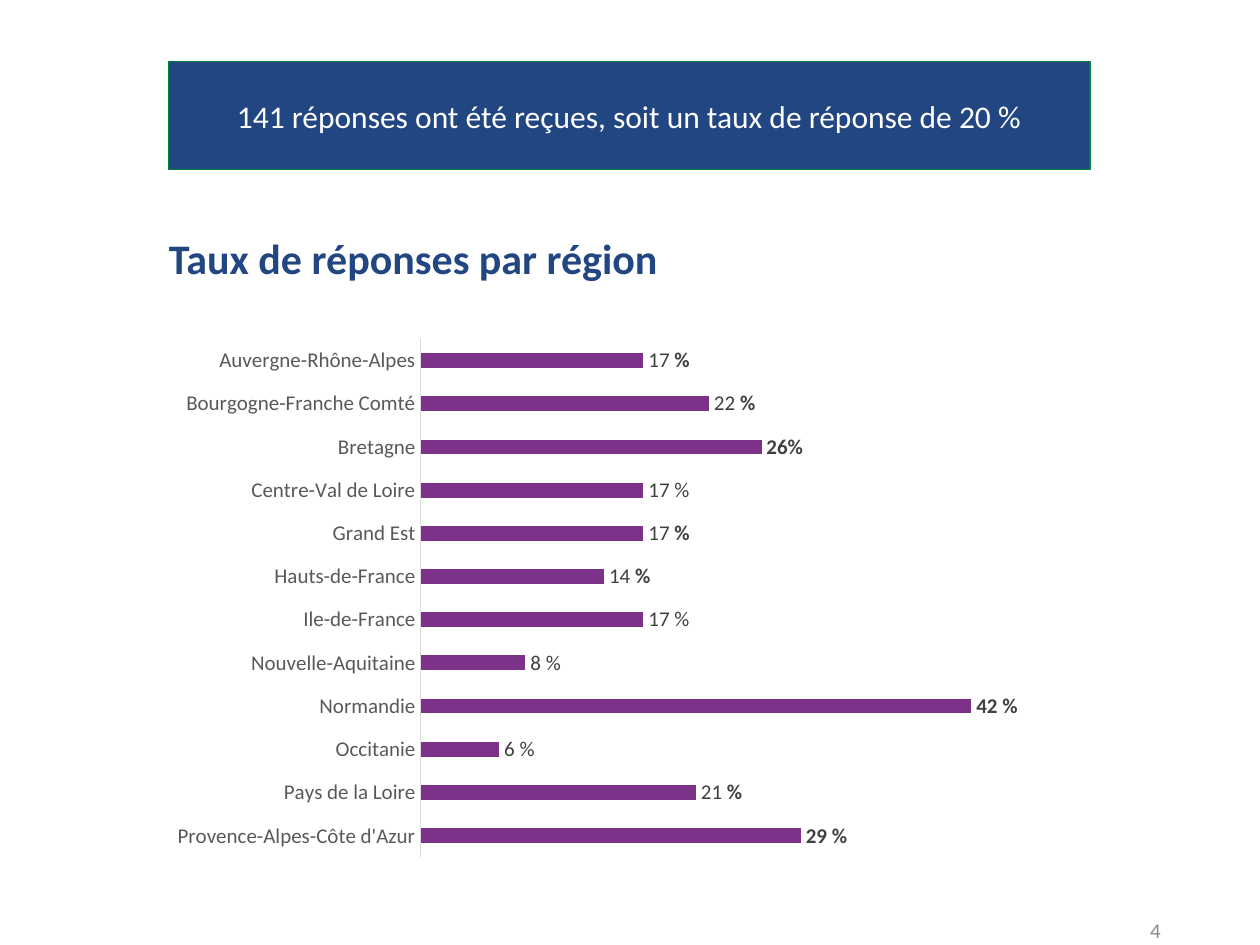
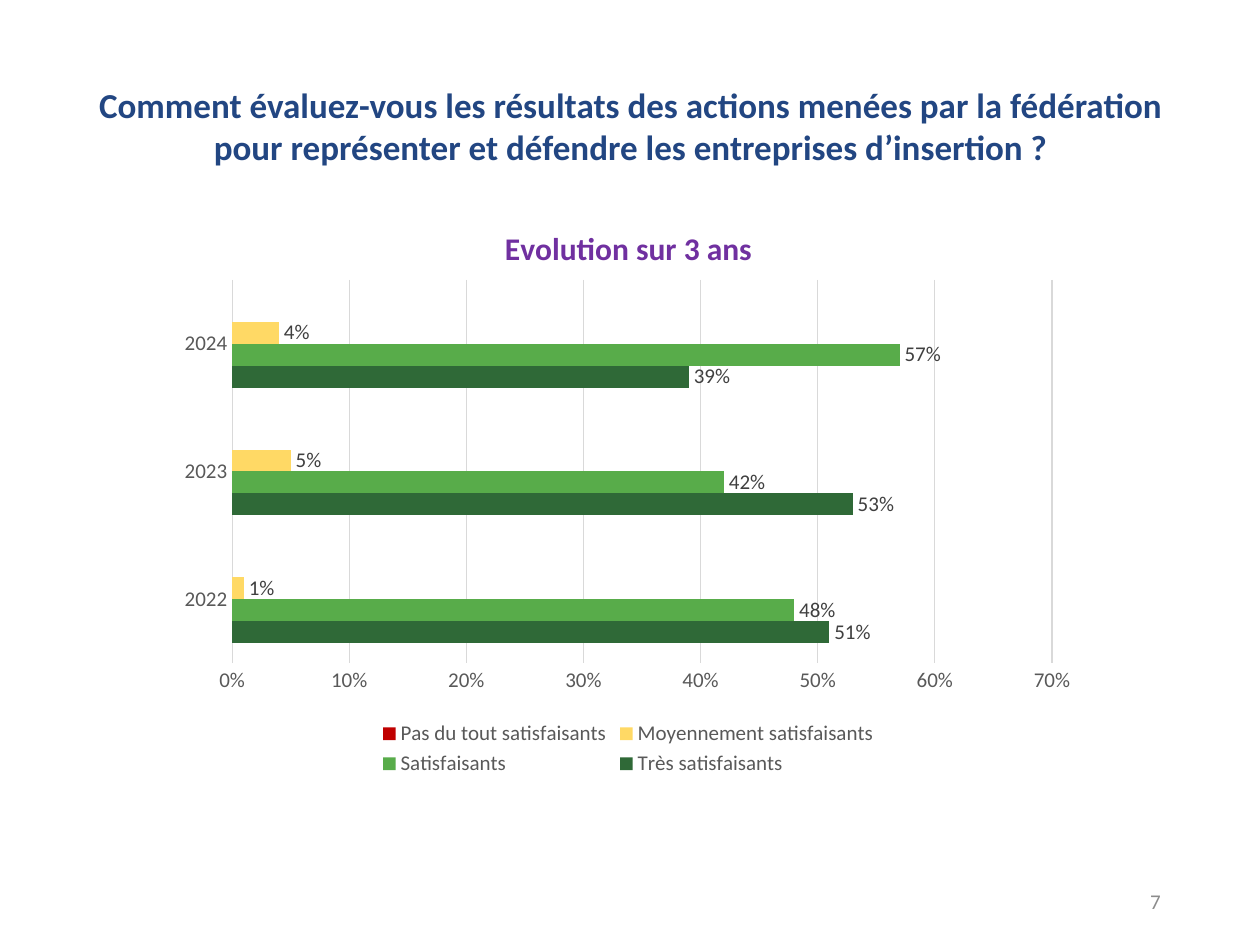
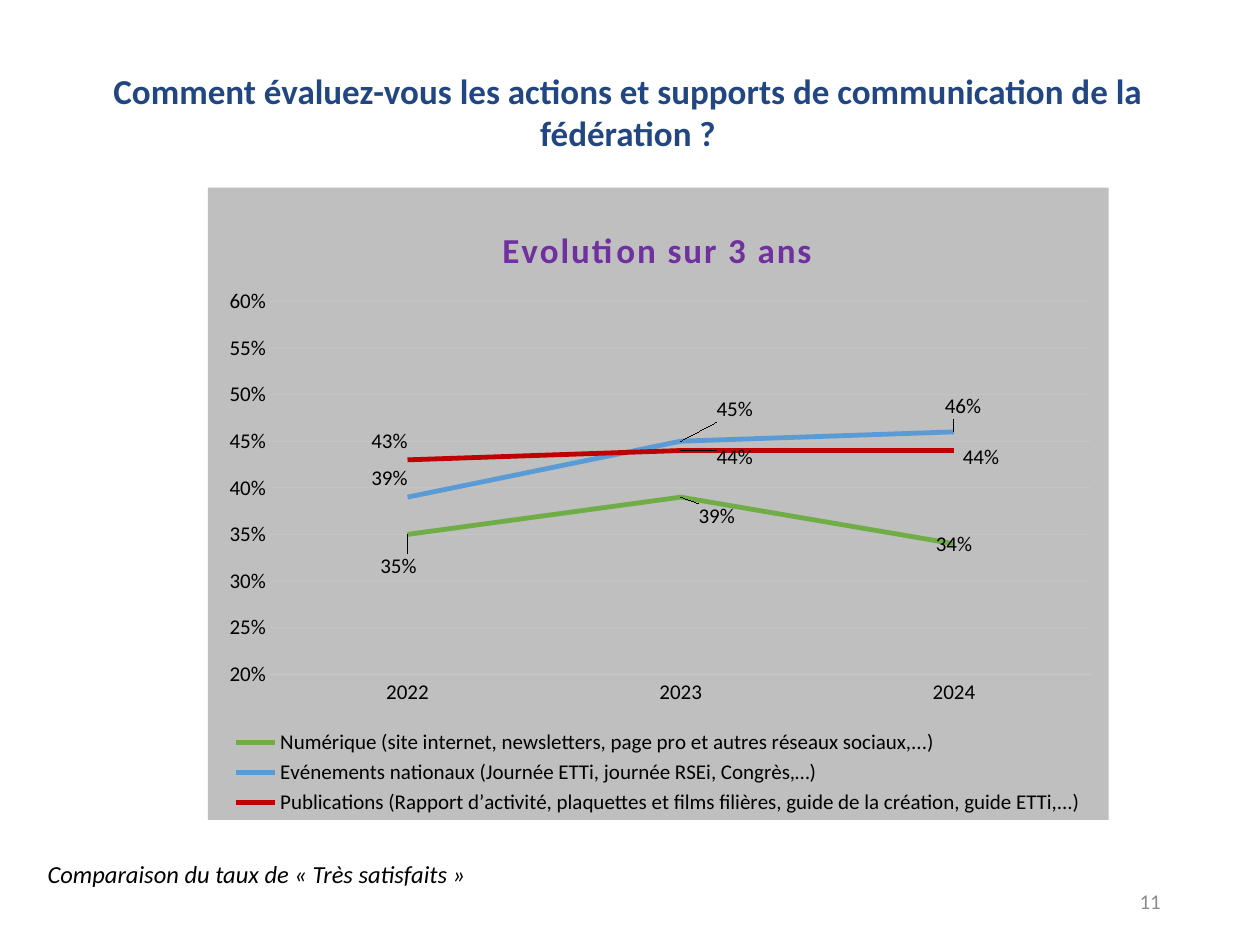
"""Build three survey slides: response rate by region and two three-year trends."""
from lxml.etree import SubElement
from pptx import Presentation
from pptx.chart.data import CategoryChartData
from pptx.dml.color import RGBColor
from pptx.enum.chart import XL_CHART_TYPE, XL_LABEL_POSITION, XL_LEGEND_POSITION, XL_TICK_MARK
from pptx.enum.shapes import MSO_SHAPE
from pptx.enum.text import MSO_ANCHOR, MSO_AUTO_SIZE, PP_ALIGN
from pptx.oxml.ns import qn
from pptx.util import Cm, Pt

FONT = "Calibri"
COLORS = {
    "navy": "224682",
    "green": "00823B",
    "plum": "7D3289",
    "violet": "7030A0",
    "white": "FFFFFF",
    "black": "000000",
    "number": "8C8C8C",
    "axis": "595959",
    "label": "404040",
    "rule": "D9D9D9",
    "pale_rule": "F2F2F2",
    "panel": "BFBFBF",
    "dark_green": "2F6937",
    "mid_green": "58AC4A",
    "yellow": "FFD965",
    "red": "C00000",
    "lime": "70AD47",
    "sky": "5B9BD5",
}


def style_font(font, size, color, bold=False, italic=False):
    font.name = FONT
    font.size = Pt(size)
    font.bold = bold
    font.italic = italic
    font.color.rgb = RGBColor.from_string(COLORS[color])


def set_layout(parent, position, modes, **fractions):
    layout = parent.find(qn("c:layout"))
    if layout is None:
        layout = parent.makeelement(qn("c:layout"))
        parent.insert(position, layout)
    manual = SubElement(layout, qn("c:manualLayout"))
    for name, value in {**modes, **fractions}.items():
        SubElement(manual, qn(f"c:{name}")).set("val", str(value))


EDGES = {"xMode": "edge", "yMode": "edge"}
INNER = {"layoutTarget": "inner", **EDGES}
YEARS = ["2022", "2023", "2024"]
REGIONS = [
    ("Provence-Alpes-Côte d'Azur", 0.29, "", "29 %"),
    ("Pays de la Loire", 0.21, "21 ", "%"),
    ("Occitanie", 0.06, "6 %", ""),
    ("Normandie", 0.42, "", "42 %"),
    ("Nouvelle-Aquitaine", 0.08, "8 %", ""),
    ("Ile-de-France", 0.17, "17 %", ""),
    ("Hauts-de-France", 0.14, "14 ", "%"),
    ("Grand Est", 0.17, "17 ", "%"),
    ("Centre-Val de Loire", 0.17, "17 %", ""),
    ("Bretagne", 0.26, "", "26%"),
    ("Bourgogne-Franche Comté", 0.22, "22 ", "%"),
    ("Auvergne-Rhône-Alpes", 0.17, "17 ", "%"),
]
PAGES = [
    {
        "title": "Taux de réponses par région",
        "title_box": (3.15, 4.55, 10.6, 1.27),
        "title_size": 24,
        "alignment": PP_ALIGN.LEFT,
        "number": "4",
        "number_top": 18.24,
        "type": XL_CHART_TYPE.BAR_CLUSTERED,
        "chart_box": (3.25, 4.85, 18.03, 13.23),
        "plot": (0.29, 0.15, 0.66, 0.79),
        "categories": [region[0] for region in REGIONS],
        "series": [("Taux de réponses", [region[1] for region in REGIONS], "plum")],
        "gap": 192,
        "scale": (0, 0.45),
        "axis_color": "axis",
        "label_color": "label",
        "rule": "rule",
    },
    {
        "title": "Comment évaluez-vous les résultats des actions menées par la fédération "
                 "pour représenter et défendre les entreprises d’insertion ?",
        "title_box": (1.73, 1.55, 21.97, 1.96),
        "title_size": 20,
        "alignment": PP_ALIGN.CENTER,
        "number": "7",
        "number_top": 17.65,
        "type": XL_CHART_TYPE.BAR_CLUSTERED,
        "chart_box": (3.38, 3.86, 18.57, 11.89),
        "plot": (0.07, 0.15, 0.89, 0.65),
        "categories": YEARS,
        "series": [
            ("Très satisfaisants", [0.51, 0.53, 0.39], "dark_green"),
            ("Satisfaisants", [0.48, 0.42, 0.57], "mid_green"),
            ("Moyennement satisfaisants", [0.01, 0.05, 0.04], "yellow"),
            ("Pas du tout satisfaisants", [None, None, None], "red"),
        ],
        "gap": 182,
        "scale": (0, 0.7),
        "step": 0.1,
        "axis_color": "axis",
        "label_color": "label",
        "rule": "rule",
        "heading": (18, 0, 0.36, 0.05),
    },
    {
        "title": "Comment évaluez-vous les actions et supports de communication "
                 "de la fédération ?",
        "title_box": (1.47, 1.27, 22.38, 1.96),
        "title_size": 20,
        "alignment": PP_ALIGN.CENTER,
        "number": "11",
        "number_top": 17.65,
        "type": XL_CHART_TYPE.LINE,
        "chart_box": (4.19, 3.78, 18.16, 12.75),
        "plot": (0.07, 0.18, 0.91, 0.59),
        "categories": YEARS,
        "series": [
            ("Numérique (site internet, newsletters, page pro et autres réseaux sociaux,...)",
             [0.35, 0.39, 0.34], "lime"),
            ("Evénements nationaux (Journée ETTi, journée RSEi, Congrès,…)",
             [0.39, 0.45, 0.46], "sky"),
            ("Publications (Rapport d’activité, plaquettes et films filières, "
             "guide de la création, guide ETTi,...)", [0.43, 0.44, 0.44], "red"),
        ],
        "scale": (0.2, 0.6),
        "step": 0.05,
        "axis_color": "black",
        "label_color": "black",
        "rule": "pale_rule",
        "heading": (20, 100, 0.32, 0.05),
    },
]

presentation = Presentation()
presentation.slide_width = Cm(25.4)
presentation.slide_height = Cm(19.05)
slides = []
charts = []

for page in PAGES:
    slide = presentation.slides.add_slide(presentation.slide_layouts[5])
    slides.append(slide)
    is_line = page["type"] == XL_CHART_TYPE.LINE

    title = slide.shapes.title
    title.left, title.top, title.width, title.height = map(Cm, page["title_box"])
    frame = title.text_frame
    frame.text = page["title"]
    frame.word_wrap = True
    frame.auto_size = MSO_AUTO_SIZE.NONE
    frame.vertical_anchor = MSO_ANCHOR.TOP
    frame.paragraphs[0].alignment = page["alignment"]
    style_font(frame.paragraphs[0].runs[0].font, page["title_size"], "navy", bold=True)

    number = slide.shapes.add_textbox(Cm(17.93), Cm(page["number_top"]), Cm(5.72), Cm(1.02))
    frame = number.text_frame
    frame.text = page["number"]
    frame.word_wrap = True
    frame.vertical_anchor = MSO_ANCHOR.MIDDLE
    frame.paragraphs[0].alignment = PP_ALIGN.RIGHT
    style_font(frame.paragraphs[0].runs[0].font, 12, "number")

    data = CategoryChartData(number_format="0%")
    data.categories = page["categories"]
    for name, values, color in page["series"]:
        data.add_series(name, values)
    chart = slide.shapes.add_chart(page["type"], *map(Cm, page["chart_box"]), data).chart
    charts.append(chart)
    style_font(chart.font, 10, "black")
    chart.has_title = "heading" in page
    chart.has_legend = "heading" in page
    plot_area = chart._chartSpace.chart.plotArea
    set_layout(plot_area, 0, INNER, **dict(zip("xywh", page["plot"])))

    plot = chart.plots[0]
    plot.vary_by_categories = False
    if not is_line:
        plot.gap_width = page["gap"]
        plot.overlap = 0
    for series, (name, values, color) in zip(plot.series, page["series"]):
        if is_line:
            series.smooth = False
            series.format.line.width = Pt(2.75)
            series.format.line.color.rgb = RGBColor.from_string(COLORS[color])
        else:
            series.invert_if_negative = False
            series.format.fill.solid()
            series.format.fill.fore_color.rgb = RGBColor.from_string(COLORS[color])
        labels = series.data_labels
        labels.show_value = True
        labels.number_format = "0%"
        labels.number_format_is_linked = False
        labels.position = XL_LABEL_POSITION.CENTER if is_line else XL_LABEL_POSITION.OUTSIDE_END
        style_font(labels.font, 12, page["label_color"])

    value_axis = chart.value_axis
    value_axis.minimum_scale, value_axis.maximum_scale = page["scale"]
    value_axis.has_major_gridlines = "heading" in page
    value_axis.visible = "heading" in page
    value_axis.format.line.fill.background()
    value_axis.tick_labels.number_format = "0%"
    value_axis.tick_labels.number_format_is_linked = False
    rules = [chart.category_axis.format.line]
    if "heading" in page:
        value_axis.major_unit = page["step"]
        rules.append(value_axis.major_gridlines.format.line)
    for rule in rules:
        rule.width = Pt(0.75)
        rule.color.rgb = RGBColor.from_string(COLORS[page["rule"]])
    for axis in (chart.category_axis, value_axis):
        axis.major_tick_mark = XL_TICK_MARK.NONE
        axis.minor_tick_mark = XL_TICK_MARK.NONE
        style_font(axis.tick_labels.font, 12, page["axis_color"])

    if "heading" in page:
        size, spacing, left, top = page["heading"]
        heading = chart.chart_title
        heading.include_in_layout = False
        heading.text_frame.text = "Evolution sur 3 ans"
        run = heading.text_frame.paragraphs[0].runs[0]
        style_font(run.font, size, "violet", bold=True)
        run._r.get_or_add_rPr().set("spc", str(spacing))
        set_layout(heading._element, 1, EDGES, x=left, y=top)
        chart.legend.position = XL_LEGEND_POSITION.BOTTOM
        chart.legend.include_in_layout = False
        style_font(chart.legend.font, 12, page["axis_color"])

region_slide, results_slide, communication_slide = slides
region_chart, results_chart, communication_chart = charts

banner = region_slide.shapes.add_shape(
    MSO_SHAPE.RECTANGLE, Cm(3.4), Cm(1.24), Cm(18.57), Cm(2.18))
banner.shadow.inherit = False
banner.fill.solid()
banner.fill.fore_color.rgb = RGBColor.from_string(COLORS["navy"])
banner.line.color.rgb = RGBColor.from_string(COLORS["green"])
banner.line.width = Pt(1)
banner.text_frame.text = "141 réponses ont été reçues, soit un taux de réponse de 20 %"
banner.text_frame.word_wrap = True
banner.text_frame.vertical_anchor = MSO_ANCHOR.MIDDLE
banner.text_frame.paragraphs[0].alignment = PP_ALIGN.CENTER
style_font(banner.text_frame.paragraphs[0].runs[0].font, 18, "white")

region_series = region_chart.plots[0].series[0]
for index, (region, rate, plain, strong) in enumerate(REGIONS):
    label = region_series.points[index].data_label
    paragraph = label.text_frame.paragraphs[0]
    for text, bold in ((plain, False), (strong, True)):
        if text:
            run = paragraph.add_run()
            run.text = text
            style_font(run.font, 12, "label", bold=bold)
    label.position = XL_LABEL_POSITION.OUTSIDE_END

LABEL_OFFSETS = [
    [(-0.01, 0.05), (0.04, 0.03)],
    [(-0.02, -0.03), (0.06, -0.05), (0.01, -0.04)],
    [(-0.02, -0.03), (0.06, 0.01), (0.03, 0.01)],
]
for series, offsets in zip(communication_chart.plots[0].series, LABEL_OFFSETS):
    for index, (across, down) in enumerate(offsets):
        label = series.points[index].data_label
        style_font(label.font, 12, "black")
        label.position = XL_LABEL_POSITION.CENTER
        element = series._element.xpath(f"c:dLbls/c:dLbl[c:idx/@val='{index}']")[0]
        set_layout(element, 1, {}, x=across, y=down)

chart_space = communication_chart._chartSpace
for color in chart_space.xpath(f".//a:ln//a:srgbClr[@val='{COLORS['pale_rule']}']"):
    SubElement(color, qn("a:alpha")).set("val", "10000")
panel = chart_space.makeelement(qn("c:spPr"))
panel_fill = SubElement(panel, qn("a:solidFill"))
SubElement(panel_fill, qn("a:srgbClr")).set("val", COLORS["panel"])
SubElement(SubElement(panel, qn("a:ln")), qn("a:noFill"))
chart_space.chart.addnext(panel)

caption = communication_slide.shapes.add_textbox(Cm(0.71), Cm(17.2), Cm(11.99), Cm(0.86))
caption.text_frame.text = "Comparaison du taux de « Très satisfaits »"
caption.text_frame.word_wrap = True
style_font(caption.text_frame.paragraphs[0].runs[0].font, 14, "black", italic=True)

presentation.save("out.pptx")
